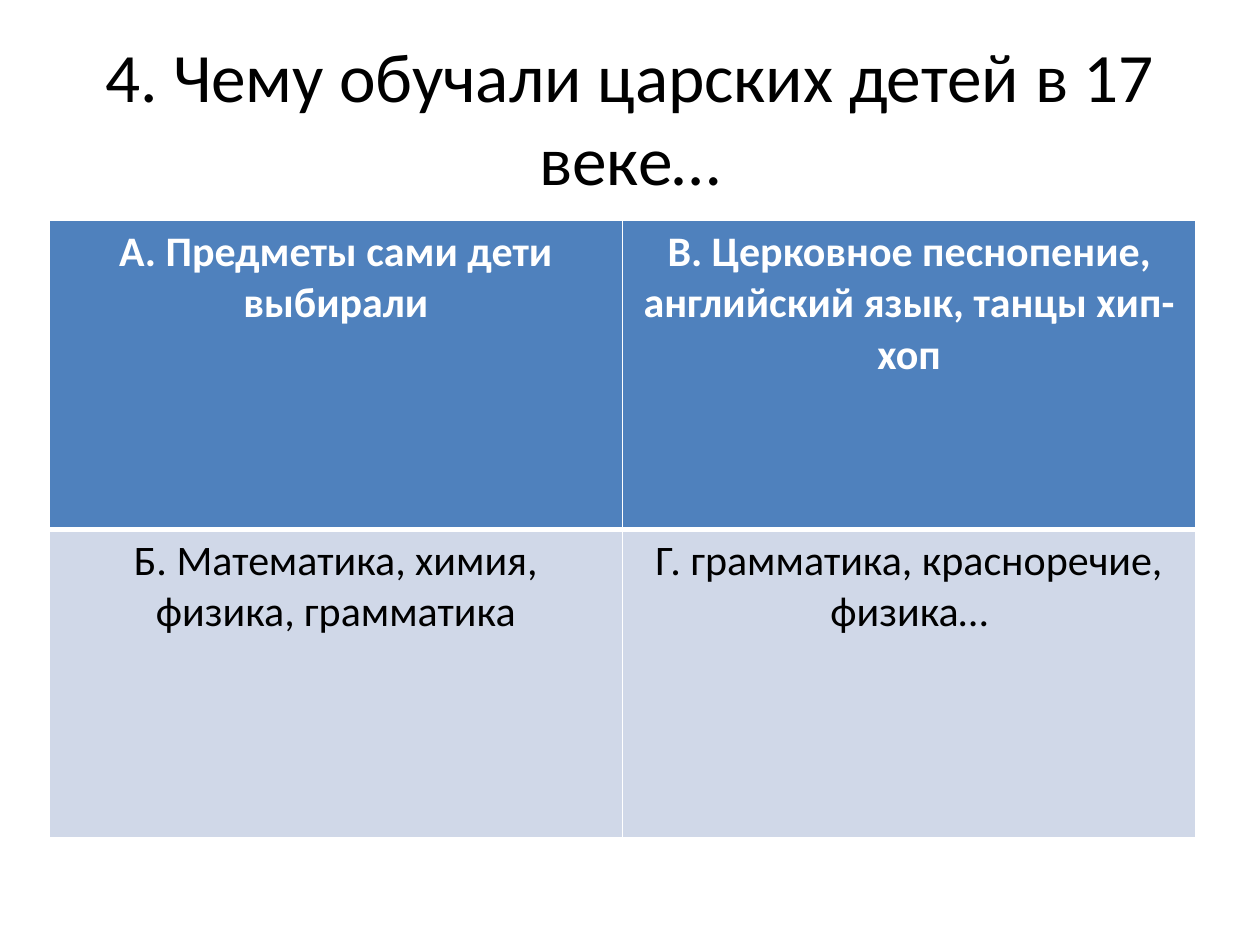
from lxml.etree import SubElement
from pptx import Presentation
from pptx.dml.color import RGBColor
from pptx.enum.text import MSO_ANCHOR, PP_ALIGN
from pptx.oxml.ns import qn
from pptx.util import Inches, Pt

HEADER = ["А. Предметы сами дети выбирали",
          "В. Церковное песнопение, английский язык, танцы хип- хоп"]
BODY = ["Б. Математика, химия, физика, грамматика",
        "Г. грамматика, красноречие, физика…"]


def color(value):
    return RGBColor.from_string(value)


def write(frame, text, size=24, ink="000000", bold=False, anchor=MSO_ANCHOR.TOP):
    frame.word_wrap = True
    frame.vertical_anchor = anchor
    paragraph = frame.paragraphs[0]
    paragraph.alignment = PP_ALIGN.CENTER
    run = paragraph.add_run()
    run.text = text
    run.font.name = "Calibri"
    run.font.size = Pt(size)
    run.font.bold = bold
    run.font.color.rgb = color(ink)


def add_title(slide, text):
    title = slide.shapes.add_textbox(Inches(0.5), Inches(0.3), Inches(9), Inches(1.25))
    write(title.text_frame, text, size=39.6, anchor=MSO_ANCHOR.MIDDLE)


def set_borders(cell, top=1, bottom=1, ink="FFFFFF"):
    properties = cell._tc.get_or_add_tcPr()
    for side, width in (("L", 1), ("R", 1), ("T", top), ("B", bottom)):
        line = SubElement(properties, qn(f"a:ln{side}"), w=str(Pt(width)))
        fill = SubElement(line, qn("a:solidFill"))
        SubElement(fill, qn("a:srgbClr"), val=ink)


def fill_row(cells, answers, background, ink, bold=False, top=1, bottom=1):
    for cell, answer in zip(cells, answers):
        set_borders(cell, top, bottom)
        cell.fill.solid()
        cell.fill.fore_color.rgb = color(background)
        write(cell.text_frame, answer, ink=ink, bold=bold)


def add_answers(slide):
    answers = slide.shapes.add_table(
        2, 2, Inches(0.39), Inches(1.75), Inches(9.1), Inches(4.9)).table
    fill_row(answers.rows[0].cells, HEADER, "4F81BD", "FFFFFF", bold=True, bottom=3)
    fill_row(answers.rows[1].cells, BODY, "D0D8E8", "000000", top=3)


def main():
    presentation = Presentation()
    presentation.slide_width = Inches(10)
    presentation.slide_height = Inches(7.5)
    slide = presentation.slides.add_slide(presentation.slide_layouts[6])
    add_title(slide, "4. Чему обучали царских детей в 17 веке…")
    add_answers(slide)
    presentation.save("out.pptx")


if __name__ == "__main__":
    main()
